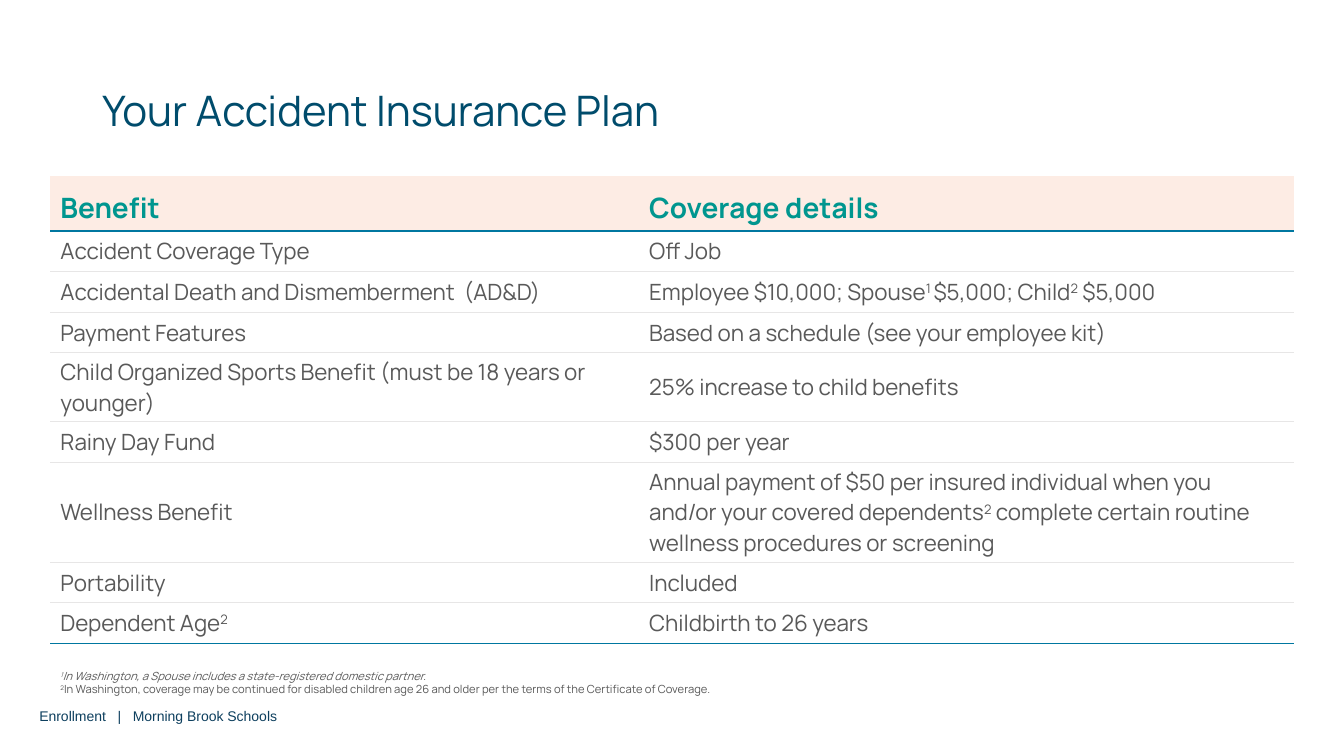
from pptx import Presentation, util as u
from pptx.dml.color import RGBColor
from pptx.enum import text as t
from pptx.oxml import parse_xml
from pptx.oxml.ns import nsdecls

FONT = "Manrope"
TEAL, BLUE, GREY, RULE = "00968F", "0077A0", "595959", "E7E6E6"

# Text between carets is superscript
ROWS = [
    ("Benefit", "Coverage details"),
    ("Accident Coverage Type", "Off Job"),
    ("Accidental Death and Dismemberment  (AD&D)",
     "Employee $10,000; Spouse^1 ^$5,000; Child^2^ $5,000"),
    ("Payment Features", "Based on a schedule (see your employee kit)"),
    ("Child Organized Sports Benefit (must be 18 years or younger)",
     "25% increase to child benefits"),
    ("Rainy Day Fund", "$300 per year"),
    ("Wellness Benefit",
     "Annual payment of $50 per insured individual when you and/or your "
     "covered dependents^2^ complete certain routine wellness procedures or screening"),
    ("Portability", "Included"),
    ("Dependent Age^2^", "Childbirth to 26 years"),
]
# Rows of one line are 29 high; the header and wrapped rows are taller
LINE = 29
TALL = {0: 39, 4: 49.3, 6: 71.3}
HEIGHTS = [TALL.get(r, LINE) for r in range(len(ROWS))]
NOTES = [
    "^1^In Washington, a Spouse includes a state-registered domestic partner.",
    "^2^In Washington, coverage may be continued for disabled children age 26 "
    "and older per the terms of the Certificate of Coverage.",
]


def rgb(code):
    return RGBColor.from_string(code)


def write(para, words, size, color, font=FONT, bold=False, slant=False):
    for i, part in enumerate(words.split("^")):
        if not part:
            continue
        run = para.add_run()
        run.text = part
        face = run.font
        face.name, face.size = font, u.Pt(size)
        face.bold, face.italic = bold, slant
        face.color.rgb = rgb(color)
        if i % 2:
            run._r.get_or_add_rPr().set("baseline", "30000")


def edge(cell, sides):
    props = cell._tc.get_or_add_tcPr()
    for i, side in enumerate("LRTB"):
        color = sides.get(side)
        fill = (f'<a:solidFill><a:srgbClr val="{color}"/></a:solidFill>'
                if color else "<a:noFill/>")
        props.insert(i, parse_xml(
            f'<a:ln{side} {nsdecls("a")} w="12700">{fill}</a:ln{side}>'))


def add_title(slide, x, y, w, h):
    box = slide.shapes.title
    box.left, box.top, box.width, box.height = map(u.Pt, (x, y, w, h))
    frame = box.text_frame
    frame.auto_size = t.MSO_AUTO_SIZE.NONE
    frame.vertical_anchor = t.MSO_ANCHOR.MIDDLE
    para = frame.paragraphs[0]
    para.alignment, para.line_spacing = t.PP_ALIGN.LEFT, 0.9
    write(para, "Your Accident Insurance Plan", 30, "004C6C")


def add_plan(slide, x, y, w):
    frame = slide.shapes.add_table(
        len(ROWS), 2, *map(u.Pt, (x, y, w, sum(HEIGHTS))))
    table = frame.table
    table.first_row = table.horz_banding = False
    split = 420.5
    for col, width in zip(table.columns, (split, w - split)):
        col.width = u.Pt(width)
    last = len(ROWS) - 1
    for r, row in enumerate(ROWS):
        table.rows[r].height = u.Pt(HEIGHTS[r])
        head = r == 0
        # Blue rules close the header and the table
        sides = {"T": BLUE if r == 1 else RULE,
                 "B": BLUE if r in (0, last) else RULE}
        if head:
            del sides["T"]
        for c, words in enumerate(row):
            cell = table.cell(r, c)
            cell.vertical_anchor = t.MSO_ANCHOR.MIDDLE
            cell.margin_left = cell.margin_right = u.Pt(7.2)
            cell.margin_top = u.Pt(8.64 if head else 2.88)
            cell.margin_bottom = u.Pt(2.88)
            if head:
                cell.fill.solid()
                cell.fill.fore_color.rgb = rgb("FDECE4")
            else:
                cell.fill.background()
            edge(cell, sides)
            write(cell.text_frame.paragraphs[0], words, 20 if head else 16,
                  TEAL if head else GREY, bold=head)


def add_box(slide, x, y, w, h):
    frame = slide.shapes.add_textbox(*map(u.Pt, (x, y, w, h))).text_frame
    frame.word_wrap = True
    return frame


def add_notes(slide, x, y, w, h):
    frame = add_box(slide, x, y, w, h)
    frame.auto_size = t.MSO_AUTO_SIZE.SHAPE_TO_FIT_TEXT
    for i, words in enumerate(NOTES):
        para = frame.add_paragraph() if i else frame.paragraphs[0]
        write(para, words, 8, GREY, slant=i == 0)


def add_footer(slide, x, y, w, h):
    frame = add_box(slide, x, y, w, h)
    frame.vertical_anchor = t.MSO_ANCHOR.MIDDLE
    para = frame.paragraphs[0]
    write(para, "Enrollment   |   Morning Brook Schools", 10, "0D3F5E", "Arial")


def main():
    deck = Presentation()
    deck.slide_width, deck.slide_height = u.Pt(960), u.Pt(540)
    slide = deck.slides.add_slide(deck.slide_layouts[5])
    add_footer(slide, 21, 496.8, 324, 28.8)
    add_title(slide, 66, 28.8, 828, 104.4)
    add_plan(slide, 36, 126, 888)
    add_notes(slide, 36, 474.5, 480, 26.6)
    deck.save("out.pptx")


if __name__ == "__main__":
    main()
